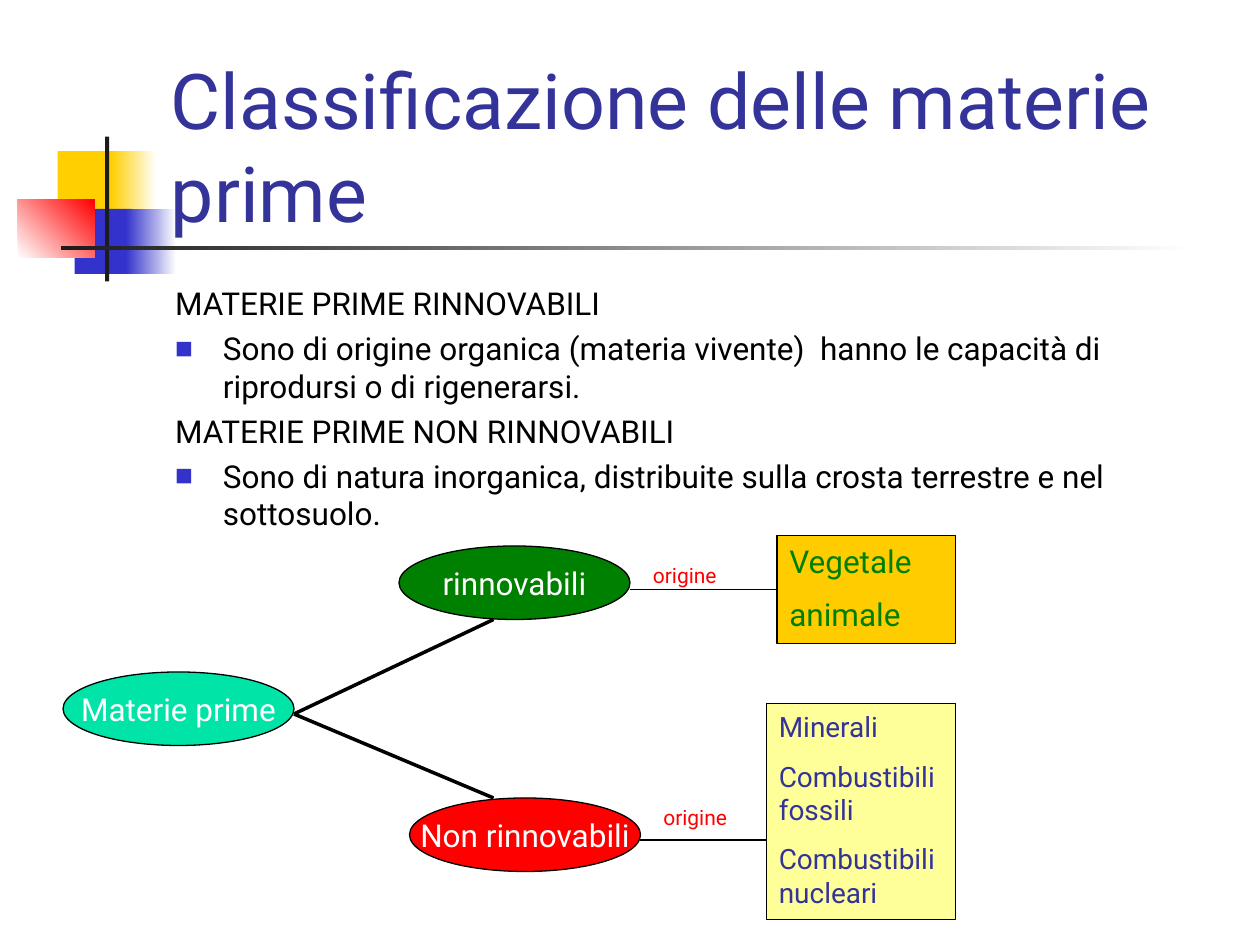
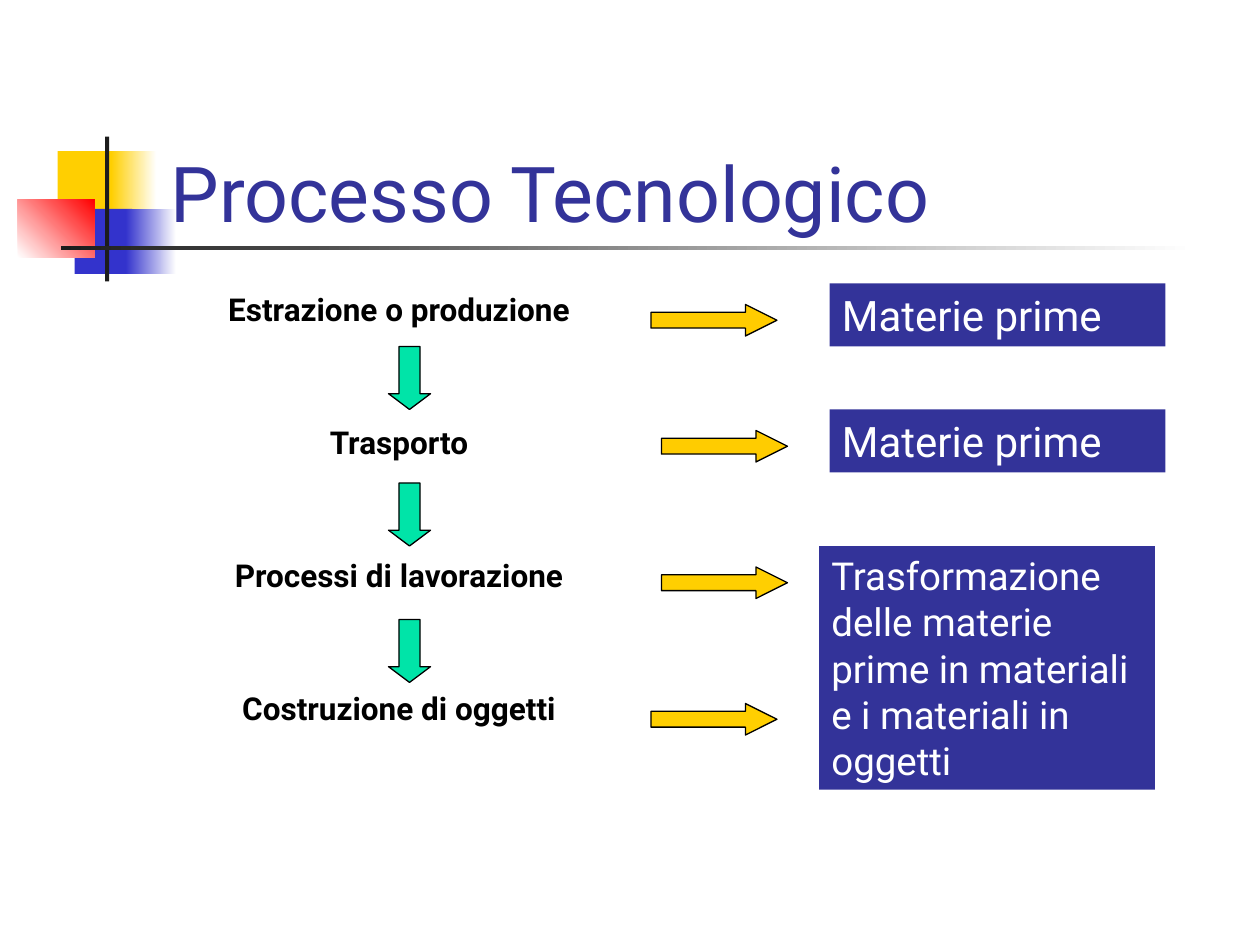
"""Build two slides on raw materials and the technological process."""
from lxml.etree import SubElement
from pptx import Presentation
from pptx.dml.color import RGBColor
from pptx.enum.shapes import MSO_CONNECTOR, MSO_SHAPE
from pptx.enum.text import MSO_ANCHOR, PP_ALIGN
from pptx.oxml.ns import qn
from pptx.util import Inches, Pt

COLORS = {
    "navy": "333399", "blue": "3333CC", "yellow": "FFCF01", "gold": "FFCC00",
    "cream": "FFFF99", "red": "FF0000", "green": "008000", "mint": "00E4A8",
    "ink": "1C1C1C", "black": "000000", "white": "FFFFFF",
}
RGB = {name: RGBColor.from_string(value) for name, value in COLORS.items()}
UNIT = Inches(1) / 12
FONT = "Roboto"
LEFT, CENTER = PP_ALIGN.LEFT, PP_ALIGN.CENTER
TOP, MIDDLE, BOTTOM = MSO_ANCHOR.TOP, MSO_ANCHOR.MIDDLE, MSO_ANCHOR.BOTTOM


def add_box(s, kind, cell, fill=None, line=None):
    """Place a preset shape, or a text box when kind is None, on the grid."""
    at = [round(n * UNIT) for n in cell]
    if kind is None:
        return s.shapes.add_textbox(*at)
    sp = s.shapes.add_shape(kind, *at)
    sp.shadow.inherit = False
    if isinstance(fill, tuple):
        start, end, angle = fill
        sp.fill.gradient()
        sp.fill.gradient_angle = angle
        for stop, name in zip(sp.fill.gradient_stops, (start, end)):
            stop.color.rgb = RGB[name]
    else:
        sp.fill.solid()
        sp.fill.fore_color.rgb = RGB[fill]
    if line:
        sp.line.color.rgb = RGB[line]
        sp.line.width = Pt(0.75)
    else:
        sp.line.fill.background()
    return sp


def write(sp, texts, size, color, align=LEFT, anchor=TOP, gap=0, wrap=True, bold=False):
    """Fill a shape with one paragraph per text and return the paragraphs."""
    tf = sp.text_frame
    tf.word_wrap = wrap
    tf.vertical_anchor = anchor
    for i, text in enumerate(texts):
        p = tf.add_paragraph() if i else tf.paragraphs[0]
        p.alignment = align
        p.space_before = Pt(gap if i else 0)
        r = p.add_run()
        r.text = text
        r.font.color.rgb = RGB[color]
        for key, value in {"name": FONT, "size": Pt(size), "bold": bold}.items():
            setattr(r.font, key, value)
    return tf.paragraphs


prs = Presentation()
prs.slide_width, prs.slide_height = Inches(10), Inches(7.5)

DECOR = [
    ((5.5, 14.4, 5.8, 6.2), "yellow"),
    ((10.6, 14.4, 4.3, 6.2), ("yellow", "white", 0)),
    ((7.1, 19.9, 5.5, 6.2), "blue"),
    ((12, 19.9, 4.8, 6.2), ("blue", "white", 0)),
    ((1.7, 19, 7.3, 5.5), ("white", "red", 45)),
    ((10, 13, 0.4, 13.8), "ink"),
    ((5.8, 23.4, 108, 0.4), ("ink", "white", 0)),
]
slides = []
for title in ("Classificazione delle materie prime", "Processo Tecnologico"):
    s = prs.slides.add_slide(prs.slide_layouts[6])
    for cell, fill in DECOR:
        add_box(s, MSO_SHAPE.RECTANGLE, cell, fill)
    sp = add_box(s, None, (15.1, 8.2, 102.2, 15))
    write(sp, [title], 44, "navy", anchor=BOTTOM)
    slides.append(s)
classification, process = slides

sp = add_box(classification, None, (15.5, 26.5, 102, 54))
definitions = write(sp, [
    "MATERIE PRIME RINNOVABILI",
    "Sono di origine organica (materia vivente)  hanno le capacità di riprodursi o di rigenerarsi.",
    "MATERIE PRIME NON RINNOVABILI",
    "Sono di natura inorganica, distribuite sulla crosta terrestre e nel sottosuolo.",
], 18, "black", gap=4)
for p in definitions[1::2]:
    pPr = p._p.get_or_add_pPr()
    pPr.set("marL", str(Inches(0.38)))
    pPr.set("indent", str(-Inches(0.38)))
    color = SubElement(pPr, qn("a:buClr"))
    SubElement(color, qn("a:srgbClr"), val=COLORS["blue"])
    SubElement(pPr, qn("a:buSzPct"), val="60000")
    SubElement(pPr, qn("a:buFont"), typeface=FONT)
    SubElement(pPr, qn("a:buChar"), char="■")

for x, y, fill, text in [
    (6, 64, "mint", "Materie prime"),
    (38, 52, "green", "rinnovabili"),
    (39, 76, "red", "Non rinnovabili"),
]:
    sp = add_box(classification, MSO_SHAPE.OVAL, (x, y, 22, 7), fill, "black")
    write(sp, [text], 18, "white", CENTER, MIDDLE, wrap=False)

origins = []
for cell, fill, color, size, texts in [
    ((74, 51, 17, 10.3), "gold", "green", 18, ["Vegetale", "animale"]),
    ((73, 67, 18, 20.6), "cream", "navy", 16,
     ["Minerali", "Combustibili fossili", "Combustibili nucleari"]),
]:
    sp = add_box(classification, MSO_SHAPE.RECTANGLE, cell, fill, "black")
    write(sp, texts, size, color, gap=9)
    origins.append(sp)

for ends, width, target in [
    ((28, 68, 47, 59), 2, None),
    ((28, 68, 47, 76), 2, None),
    ((60, 56.15, 74, 56.15), 0.75, origins[0]),
    ((61, 80, 73, 80), 0.75, None),
]:
    line = classification.shapes.add_connector(
        MSO_CONNECTOR.STRAIGHT, *[round(n * UNIT) for n in ends])
    line.line.color.rgb = RGB["black"]
    line.line.width = Pt(width)
    SubElement(line._element.spPr, qn("a:effectLst"))
    if target is not None:
        line.end_connect(target, 1)

for x, y in [(61, 53), (62, 76)]:
    sp = add_box(classification, None, (x, y, 11, 3.6))
    write(sp, ["origine"], 12, "red")

sp = add_box(process, None, (12, 27, 52, 54))
write(sp, ["Estrazione o produzione", "Trasporto", "Processi di lavorazione",
           "Costruzione di oggetti"], 18, "black", CENTER, gap=54.5, bold=True)

for y in (33, 46, 59):
    sp = add_box(process, MSO_SHAPE.DOWN_ARROW, (37, y, 4, 6), "mint", "black")
    sp.adjustments[0], sp.adjustments[1] = 0.5, 0.375

for x, y, fill in [(62, 29, "gold"), (63, 41, "gold"), (63, 54, "yellow"), (62, 67, "yellow")]:
    sp = add_box(process, MSO_SHAPE.RIGHT_ARROW, (x, y, 12, 3), fill, "black")
    sp.adjustments[0], sp.adjustments[1] = 0.5, 1

for x, y, height, size, text in [
    (79, 27, 6, 24, "Materie prime"),
    (79, 39, 6, 24, "Materie prime"),
    (78, 52, 23.2, 22,
     "Trasformazione delle materie prime in materiali e i materiali in oggetti"),
]:
    sp = add_box(process, MSO_SHAPE.RECTANGLE, (x, y, 32, height), "navy")
    write(sp, [text], size, "white")

prs.save("out.pptx")
